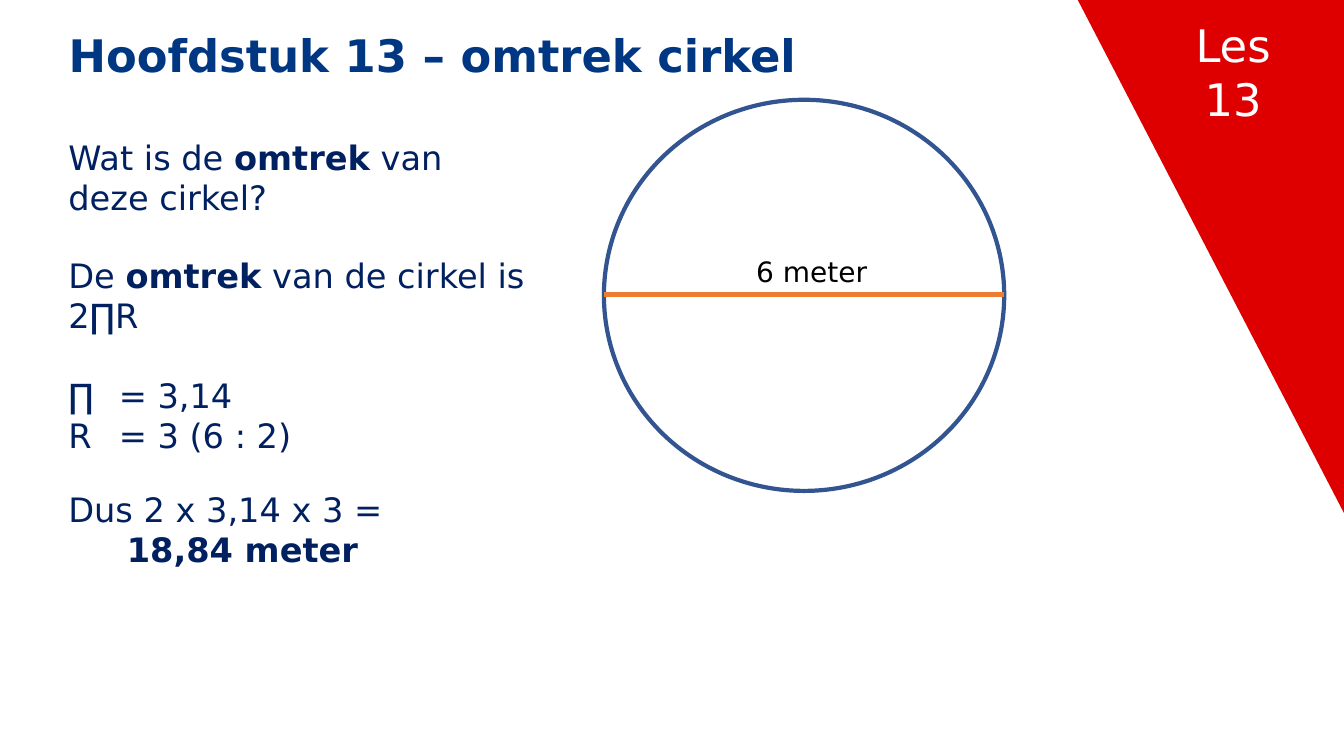
"""Build the lesson slide on the circumference of a circle."""
from dataclasses import dataclass

from pptx import Presentation
from pptx.dml.color import RGBColor
from pptx.enum.shapes import MSO_CONNECTOR, MSO_SHAPE
from pptx.enum.text import MSO_ANCHOR, MSO_AUTO_SIZE, PP_ALIGN
from pptx.oxml.ns import qn
from pptx.shapes.autoshape import Shape
from pptx.slide import Slide
from pptx.util import Emu, Pt

LEFT, CENTER = PP_ALIGN.LEFT, PP_ALIGN.CENTER
TOP = MSO_ANCHOR.TOP
NO_FIT = MSO_AUTO_SIZE.NONE
STRAIGHT = MSO_CONNECTOR.STRAIGHT
TRIANGLE, OVAL = MSO_SHAPE.ISOSCELES_TRIANGLE, MSO_SHAPE.OVAL
EMU_PER_PX = 9144
TITLE_ONLY = 5


@dataclass(frozen=True)
class Theme:
    font: str = "DejaVu Sans"
    heading_size: int = 32
    body_size: int = 24
    label_size: int = 20
    blank_line: int = 28
    outline_width: float = 3
    diameter_width: float = 3.5
    white: str = "FFFFFF"
    black: str = "000000"
    red: str = "DE0000"
    heading: str = "003782"
    body: str = "002060"
    outline: str = "325491"
    diameter: str = "ED7D31"


@dataclass(frozen=True)
class Box:
    left: int
    top: int
    width: int
    height: int

    def emu(self) -> tuple[Emu, Emu, Emu, Emu]:
        """Return the four lengths in EMU."""
        return px(self.left), px(self.top), px(self.width), px(self.height)


@dataclass(frozen=True)
class Run:
    text: str
    bold: bool = False


@dataclass(frozen=True)
class Line:
    runs: tuple[Run, ...]
    space_before: int = 0
    indent: int = 0


@dataclass(frozen=True)
class TextBlock:
    box: Box
    lines: tuple[Line, ...]
    size: int
    color: str
    align: PP_ALIGN = LEFT


THEME = Theme()
SLIDE = Box(0, 0, 1333, 750)
CORNER = Box(1069, 0, 264, 509)
CIRCLE = Box(599, 99, 397, 388)
DIAMETER_Y = 292
TITLE_BOX = Box(58, 22, 764, 64)
TITLE = Line((Run("Hoofdstuk 13 – omtrek cirkel", True),))
BLOCKS = (
    TextBlock(
        Box(1159, 13, 128, 172),
        (Line((Run("Les"),)), Line((Run("13"),))),
        THEME.heading_size, THEME.white, CENTER,
    ),
    TextBlock(
        Box(58, 131, 452, 91),
        (Line((Run("Wat is de "), Run("omtrek", True), Run(" van deze cirkel?"))),),
        THEME.body_size, THEME.body,
    ),
    TextBlock(
        Box(740, 248, 139, 44),
        (Line((Run("6 meter"),)),),
        THEME.label_size, THEME.black,
    ),
    TextBlock(
        Box(58, 248, 503, 293),
        (
            Line((Run("De "), Run("omtrek", True), Run(" van de cirkel is 2∏R"))),
            Line((Run("∏ \t= 3,14"),), space_before=THEME.blank_line),
            Line((Run("R \t= 3 (6 : 2)"),)),
        ),
        THEME.body_size, THEME.body,
    ),
    TextBlock(
        Box(58, 480, 667, 91),
        (
            Line((Run("Dus 2 x 3,14 x 3 ="),)),
            Line((Run("18,84 meter", True),), indent=58),
        ),
        THEME.body_size, THEME.body,
    ),
)


def px(length: int) -> Emu:
    """Turn px into EMU."""
    return Emu(length * EMU_PER_PX)


def rgb(color: str) -> RGBColor:
    """Turn a hex string into a colour."""
    return RGBColor.from_string(color)


def write_text(shape: Shape, lines: tuple[Line, ...], *, size: int, color: str,
               align: PP_ALIGN = LEFT) -> None:
    """Fill a shape with formatted lines."""
    frame = shape.text_frame
    frame.word_wrap = True
    frame.auto_size = NO_FIT
    frame.vertical_anchor = TOP
    for index, line in enumerate(lines):
        paragraph = frame.add_paragraph() if index else frame.paragraphs[0]
        paragraph.alignment = align
        if line.space_before:
            paragraph.space_before = Pt(line.space_before)
        if line.indent:
            paragraph._p.get_or_add_pPr().set("marL", str(px(line.indent)))
        for part in line.runs:
            run = paragraph.add_run()
            run.text = part.text
            run.font.name = THEME.font
            run.font.size = Pt(size)
            run.font.bold = part.bold
            run.font.color.rgb = rgb(color)


def add_figure(slide: Slide, kind: MSO_SHAPE, box: Box, fill: str,
               outline: str | None = None) -> Shape:
    """Add a flat preset shape with an optional outline."""
    figure = slide.shapes.add_shape(kind, *box.emu())
    figure.shadow.inherit = False
    figure.fill.solid()
    figure.fill.fore_color.rgb = rgb(fill)
    if outline:
        figure.line.color.rgb = rgb(outline)
        figure.line.width = Pt(THEME.outline_width)
    else:
        figure.line.fill.background()
    return figure


def add_diameter(slide: Slide) -> None:
    """Draw the diameter across the circle."""
    left, right = px(CIRCLE.left), px(CIRCLE.left + CIRCLE.width)
    diameter = slide.shapes.add_connector(
        STRAIGHT, left, px(DIAMETER_Y), right, px(DIAMETER_Y))
    diameter.line.color.rgb = rgb(THEME.diameter)
    diameter.line.width = Pt(THEME.diameter_width)
    properties = diameter._element.spPr
    properties.append(properties.makeelement(qn("a:effectLst"), {}))


def main() -> None:
    """Build and save the slide."""
    deck = Presentation()
    deck.slide_width, deck.slide_height = px(SLIDE.width), px(SLIDE.height)
    slide = deck.slides.add_slide(deck.slide_layouts[TITLE_ONLY])
    title = slide.shapes.title
    title.left, title.top, title.width, title.height = TITLE_BOX.emu()
    write_text(title, (TITLE,), size=THEME.heading_size, color=THEME.heading)

    corner = add_figure(slide, TRIANGLE, CORNER, THEME.red)
    corner.adjustments[0] = 0
    corner.rotation = 180
    add_figure(slide, OVAL, CIRCLE, THEME.white, THEME.outline)
    add_diameter(slide)
    for block in BLOCKS:
        text_box = slide.shapes.add_textbox(*block.box.emu())
        write_text(text_box, block.lines, size=block.size, color=block.color,
                   align=block.align)
    deck.save("out.pptx")


if __name__ == "__main__":
    main()
